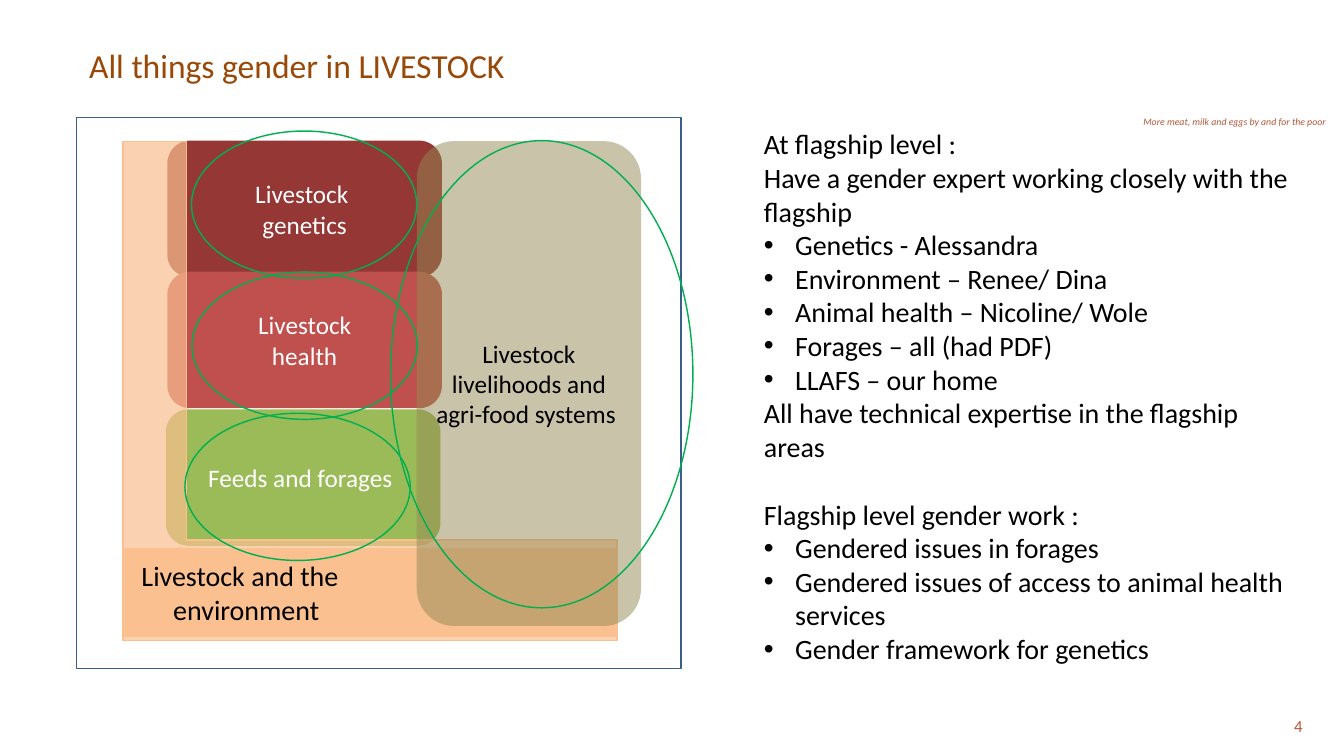
from lxml import etree
from pptx import Presentation
from pptx.dml.color import RGBColor
from pptx.enum.shapes import MSO_SHAPE
from pptx.enum.text import MSO_ANCHOR, PP_ALIGN
from pptx.oxml.ns import qn
from pptx.util import Pt

PX = 9144  # EMU per px, at 100 px to the inch
RECT, ROUND, OVAL = MSO_SHAPE.RECTANGLE, MSO_SHAPE.ROUNDED_RECTANGLE, MSO_SHAPE.OVAL
LEFT, CENTER, RIGHT = PP_ALIGN.LEFT, PP_ALIGN.CENTER, PP_ALIGN.RIGHT
MIDDLE = MSO_ANCHOR.MIDDLE

THEME = {
    "font": "Calibri",
    "title": {"size": 48, "color": "984807"},
    "body": {"size": 40, "color": "000000"},
    "on_dark": {"size": 36, "color": "FFFFFF"},
    "on_light": {"size": 36, "color": "000000"},
    "page": {"size": 24, "color": "B55638"},
    "tagline": {"size": 14, "color": "B55638", "italic": True},
    "genetics": "953735", "health": "C0504D", "forages": "9BBB59",
    "environment": "FAC090", "livelihoods": "948A54",
    "frame": "3A5F8C", "gender": "00B050",
}

deck = Presentation()
deck.slide_width, deck.slide_height = 2667 * PX, 1500 * PX
slide = deck.slides.add_slide(deck.slide_layouts[6])


def write(box, lines, style, align=LEFT, wrap=True):
    """Fill a box; each line is a string or (string, paragraph layout)."""
    frame = box.text_frame
    frame.word_wrap = wrap
    look = THEME[style]
    for number, line in enumerate(lines):
        text, layout = (line, {}) if isinstance(line, str) else line
        para = frame.paragraphs[0] if number == 0 else frame.add_paragraph()
        para.alignment = align
        if "space_before" in layout:
            para.space_before = Pt(layout["space_before"])
        properties = para._p.get_or_add_pPr()
        for name in ("marL", "indent"):
            if name in layout:
                properties.set(name, str(layout[name] * PX))
        if "bullet" in layout:
            etree.SubElement(properties, qn("a:buFont")).set("typeface", "Arial")
            etree.SubElement(properties, qn("a:buChar")).set("char", layout["bullet"])
        span = para.add_run()
        span.text = text
        values = {"name": THEME["font"], "size": Pt(look["size"]),
                  "italic": look.get("italic", False)}
        for name, value in values.items():
            setattr(span.font, name, value)
        span.font.color.rgb = RGBColor.from_string(look["color"])


def draw(kind, place, fill=None, line=None, opacity=None):
    shape = slide.shapes.add_shape(kind, *(length * PX for length in place))
    shape.shadow.inherit = False
    if fill:
        shape.fill.solid()
        shape.fill.fore_color.rgb = RGBColor.from_string(THEME[fill])
        if opacity:
            color = shape._element.spPr.find(qn("a:solidFill")).find(qn("a:srgbClr"))
            etree.SubElement(color, qn("a:alpha")).set("val", str(opacity * 1000))
    else:
        shape.fill.background()
    if line:
        shape.line.color.rgb = RGBColor.from_string(THEME[line])
        shape.line.width = Pt(2)
    else:
        shape.line.fill.background()
    shape.text_frame.vertical_anchor = MIDDLE
    return shape


# Page number, tagline, the list on the right and the title
bullet = {"marL": 62, "indent": -62, "bullet": "•"}
body_lines = [
    "At flagship level :",
    "Have a gender expert working closely with the flagship",
    ("Genetics - Alessandra", bullet),
    ("Environment – Renee/ Dina", bullet),
    ("Animal health – Nicoline/ Wole", bullet),
    ("Forages – all (had PDF)", bullet),
    ("LLAFS – our home", bullet),
    "All have technical expertise in the flagship areas",
    ("Flagship level gender work :", {"space_before": 49}),
    ("Gendered issues in forages", bullet),
    ("Gendered issues of access to animal health services", bullet),
    ("Gender framework for genetics", bullet),
]
for place, lines, style, align, wrap in [
    ((2525, 1416, 70, 50), ["4"], "page", RIGHT, True),
    ((2259, 225, 385, 34), ["More meat, milk and eggs by and for the poor"], "tagline", LEFT, False),
    ((1506, 247, 1071, 1087), body_lines, "body", LEFT, True),
    ((167, 84, 1375, 91), ["All things gender in LIVESTOCK"], "title", LEFT, True),
]:
    box = slide.shapes.add_textbox(*(length * PX for length in place))
    write(box, lines, style, align, wrap)

# Flagship blocks, overlapped by the environment and livelihoods flagships
for left, top, fill, lines in [
    (332, 279, "genetics", ["Livestock ", "genetics"]),
    (332, 539, "health", ["Livestock", "health"]),
    (329, 812, "forages", ["Feeds and forages "]),
]:
    write(draw(ROUND, (left, top, 545, 271), fill), lines, "on_dark", CENTER)

# The L-shaped surround is the preset "corner", set by its XML name
surround = draw(RECT, (244, 281, 980, 990), "environment", "environment", 70)
geometry = surround._element.spPr.find(qn("a:prstGeom"))
geometry.set("prst", "corner")
for name, value in {"adj1": 20400, "adj2": 12900}.items():
    guide = etree.SubElement(geometry.find(qn("a:avLst")), qn("a:gd"))
    guide.set("name", name)
    guide.set("fmla", f"val {value}")

environment = draw(RECT, (246, 1089, 976, 173), "environment", "environment")
write(environment, [("Livestock and the", {"marL": 25}), ("environment", {"marL": 88})], "body")

livelihoods = draw(ROUND, (827, 280, 445, 962), "livelihoods", opacity=50)
write(livelihoods, ["Livestock livelihoods and agri-food systems "], "on_light", CENTER)

draw(RECT, (152, 233, 1199, 1093), line="frame")

# Green rings mark where gender work takes place
draw(OVAL, (775, 279, 600, 927), line="gender")
for row, left in enumerate((380, 381, 367)):
    draw(OVAL, (left, 260 + 280 * row, 447, 292), line="gender")

deck.save("out.pptx")
